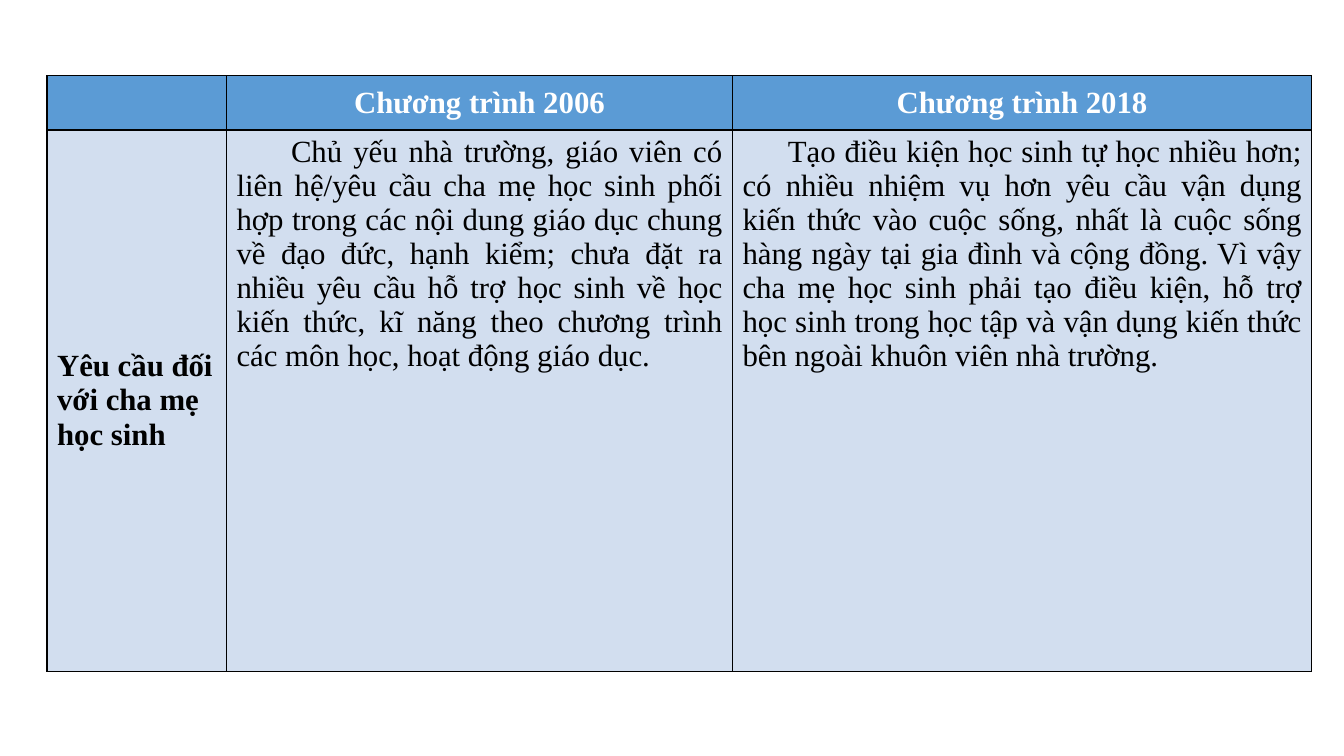
from lxml import etree
from pptx import Presentation
from pptx.dml.color import RGBColor
from pptx.enum.text import MSO_ANCHOR, PP_ALIGN
from pptx.oxml.ns import qn
from pptx.util import Inches, Pt

LEFT, CENTER, JUSTIFY = PP_ALIGN.LEFT, PP_ALIGN.CENTER, PP_ALIGN.JUSTIFY
TOP, MIDDLE = MSO_ANCHOR.TOP, MSO_ANCHOR.MIDDLE

COLORS = {
    "header": "5B9BD5",
    "body": "D2DEEF",
    "border": "000000",
    "header_text": "FFFFFF",
    "body_text": "000000",
}

# Positions and sizes are percentages of the slide's width or height.
TABLE_LEFT, TABLE_TOP = 3.5, 10
COLUMN_WIDTHS = [13.35, 37.65, 43.1]
ROW_HEIGHTS = [7.2, 71.6]

HEADER = {"fill": "header", "color": "header_text", "bold": True,
          "anchor": MIDDLE, "paragraph": {"alignment": CENTER}}
ROW_TITLE = {"fill": "body", "color": "body_text", "bold": True,
             "anchor": MIDDLE, "paragraph": {"alignment": LEFT}}
DETAIL = {"fill": "body", "color": "body_text", "bold": False, "anchor": TOP,
          "paragraph": {"alignment": JUSTIFY, "space_after": Pt(12)}}

# Each cell: text, format, first-line indent in inches.
ROWS = [
    [
        ("", HEADER, 0),
        ("Chương trình 2006", HEADER, 0),
        ("Chương trình 2018", HEADER, 0),
    ],
    [
        ("Yêu cầu đối với cha mẹ học sinh", ROW_TITLE, 0),
        ("Chủ yếu nhà trường, giáo viên có liên hệ/yêu cầu cha mẹ học sinh "
         "phối hợp trong các nội dung giáo dục chung về đạo đức, hạnh kiểm; "
         "chưa đặt ra nhiều yêu cầu hỗ trợ học sinh về học kiến thức, kĩ năng "
         "theo chương trình các môn học, hoạt động giáo dục.", DETAIL, 0.54),
        ("Tạo điều kiện học sinh tự học nhiều hơn; có nhiều nhiệm vụ hơn yêu "
         "cầu vận dụng kiến thức vào cuộc sống, nhất là cuộc sống hàng ngày "
         "tại gia đình và cộng đồng. Vì vậy cha mẹ học sinh phải tạo điều "
         "kiện, hỗ trợ học sinh trong học tập và vận dụng kiến thức bên ngoài "
         "khuôn viên nhà trường.", DETAIL, 0.45),
    ],
]


class SlideBuilder:
    font_name = "Times New Roman"
    font_size = Pt(22)
    border_width = Pt(1)

    def __init__(self, presentation):
        self.width = presentation.slide_width
        self.height = presentation.slide_height
        self.slide = presentation.slides.add_slide(presentation.slide_layouts[6])

    def across(self, percent):
        return round(self.width * percent / 100)

    def down(self, percent):
        return round(self.height * percent / 100)

    def add_table(self, left, top, widths, heights, rows):
        table = self.slide.shapes.add_table(
            len(heights), len(widths), self.across(left), self.down(top),
            self.across(sum(widths)), self.down(sum(heights))).table
        table.horz_banding = False
        for column, width in zip(table.columns, widths):
            column.width = self.across(width)
        for row, height, contents in zip(table.rows, heights, rows):
            row.height = self.down(height)
            for cell, content in zip(row.cells, contents):
                self.fill_cell(cell, *content)

    def fill_cell(self, cell, text, cell_format, indent):
        self.add_borders(cell)
        cell.fill.solid()
        cell.fill.fore_color.rgb = RGBColor.from_string(COLORS[cell_format["fill"]])
        cell.vertical_anchor = cell_format["anchor"]
        cell.text = text
        paragraph = cell.text_frame.paragraphs[0]
        for name, value in cell_format["paragraph"].items():
            setattr(paragraph, name, value)
        if indent:
            properties = paragraph._p.get_or_add_pPr()
            properties.set("marL", "0")
            properties.set("indent", str(Inches(indent)))
        font_values = {"name": self.font_name, "size": self.font_size,
                       "bold": cell_format["bold"]}
        for run in paragraph.runs:
            for name, value in font_values.items():
                setattr(run.font, name, value)
            run.font.color.rgb = RGBColor.from_string(COLORS[cell_format["color"]])

    def add_borders(self, cell):
        """Draw all four sides; must run before the cell's fill is set."""
        properties = cell._tc.get_or_add_tcPr()
        for side in ("lnL", "lnR", "lnT", "lnB"):
            line = etree.SubElement(properties, qn(f"a:{side}"), w=str(self.border_width))
            fill = etree.SubElement(line, qn("a:solidFill"))
            etree.SubElement(fill, qn("a:srgbClr"), val=COLORS["border"])


def main():
    presentation = Presentation()
    presentation.slide_width = Inches(13.33)
    presentation.slide_height = Inches(7.5)
    builder = SlideBuilder(presentation)
    builder.add_table(TABLE_LEFT, TABLE_TOP, COLUMN_WIDTHS, ROW_HEIGHTS, ROWS)
    presentation.save("out.pptx")


if __name__ == "__main__":
    main()
